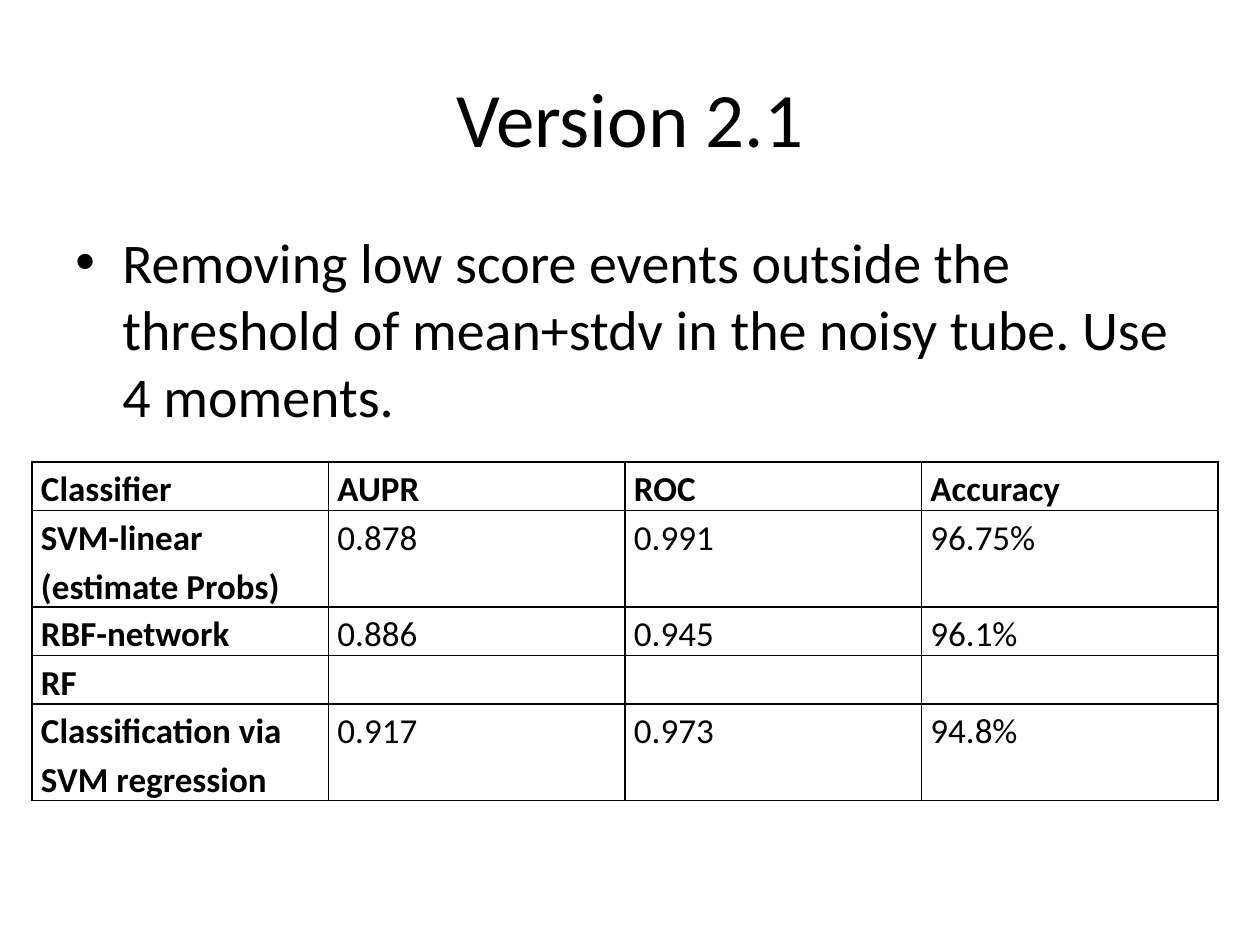
"""Build the Version 2.1 slide with its table of classifier scores."""
from lxml import etree
from pptx import Presentation
from pptx.dml.color import RGBColor
from pptx.enum.text import MSO_ANCHOR, PP_ALIGN
from pptx.oxml import parse_xml
from pptx.oxml.ns import nsdecls, qn
from pptx.util import Emu, Pt

BLACK = RGBColor(0, 0, 0)
WHITE = RGBColor(255, 255, 255)
LEFT, CENTER = PP_ALIGN.LEFT, PP_ALIGN.CENTER
MIDDLE, TOP = MSO_ANCHOR.MIDDLE, MSO_ANCHOR.TOP


def px(n):
    return Emu(round(n * 914400 / 126))


def write(frame, text, size, bold=False, align=LEFT, anchor=TOP, space=1.0):
    frame.word_wrap = True
    frame.vertical_anchor = anchor
    para = frame.paragraphs[0]
    para.alignment = align
    para.line_spacing = space
    para.font.size = Pt(size)
    if text:
        run = para.add_run()
        run.text = text
        font = run.font
        font.name, font.size, font.bold = "Calibri", Pt(size), bold
        font.color.rgb = BLACK
    return para


deck = Presentation()
deck.slide_width, deck.slide_height = px(1260), px(945)
slide = deck.slides.add_slide(deck.slide_layouts[5])
slide.background.fill.solid()
slide.background.fill.fore_color.rgb = WHITE

title = slide.shapes.title
title.left, title.top, title.width, title.height = px(63), px(38), px(1134), px(158)
write(title.text_frame, "Version 2.1", 44, align=CENTER, anchor=MIDDLE)

body = slide.shapes.add_textbox(px(63), px(221), px(1134), px(624))
para = write(
    body.text_frame,
    "Removing low score events outside the threshold of mean+stdv "
    "in the noisy tube. Use 4 moments.",
    32,
)
props = para._p.get_or_add_pPr()
props.set("marL", str(px(47)))
props.set("indent", str(-px(47)))
etree.SubElement(props, qn("a:buFont")).set("typeface", "Arial")
etree.SubElement(props, qn("a:buChar")).set("char", "•")

rows = [
    ("Classifier", "AUPR", "ROC", "Accuracy"),
    ("SVM-linear (estimate Probs)", "0.878", "0.991", "96.75%"),
    ("RBF-network", "0.886", "0.945", "96.1%"),
    ("RF", "", "", ""),
    ("Classification via SVM regression", "0.917", "0.973", "94.8%"),
]
highs = [45, 90, 45, 45, 90]
grid = slide.shapes.add_table(
    len(rows), len(rows[0]), px(32), px(462), px(1186), px(sum(highs))
).table
grid.first_row = grid.horz_banding = False
for col in grid.columns:
    col.width = px(296.5)
for r, row in enumerate(rows):
    grid.rows[r].height = px(highs[r])
    for c, text in enumerate(row):
        cell = grid.cell(r, c)
        cell.margin_left = cell.margin_right = px(9)
        cell.margin_top = cell.margin_bottom = 0
        write(cell.text_frame, text, 20, bold=r == 0 or c == 0, space=1.15)
        props = cell._tc.get_or_add_tcPr()
        for side in ("lnL", "lnR", "lnT", "lnB"):
            props.append(parse_xml(
                f'<a:{side} {nsdecls("a")} w="{Pt(1)}"><a:solidFill>'
                f'<a:srgbClr val="{BLACK}"/></a:solidFill></a:{side}>'
            ))
        cell.fill.background()

deck.save("out.pptx")
